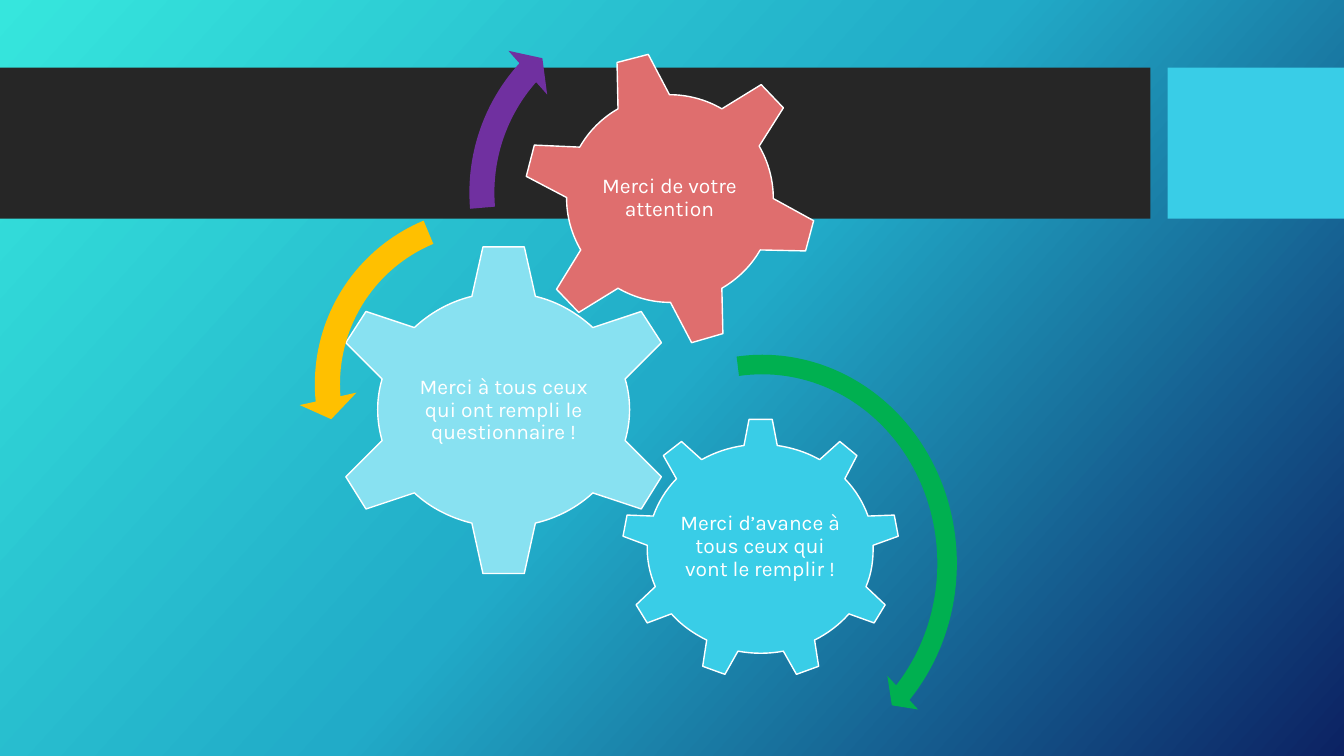
from copy import deepcopy
from math import atan2, pi, tan

from lxml import etree
from pptx import Presentation
from pptx.dml.color import RGBColor
from pptx.enum.shapes import MSO_SHAPE
from pptx.enum.text import MSO_ANCHOR, PP_ALIGN
from pptx.oxml.ns import qn
from pptx.util import Inches, Pt


def color(value):
    return RGBColor.from_string(value)


def paint(shape, fill):
    shape.shadow.inherit = False
    shape.fill.solid()
    shape.fill.fore_color.rgb = color(fill)
    shape.line.fill.background()


presentation = Presentation()
presentation.slide_width = Inches(13.33)
presentation.slide_height = Inches(7.5)
slide = presentation.slides.add_slide(presentation.slide_layouts[6])

background = slide.background.fill
background.gradient()
background.gradient_angle = 360 - 42
last_stop = list(slide._element.iter(qn("a:gs")))[-1]
last_stop.addnext(deepcopy(last_stop))
gradient = [(0, "36E6DD"), (0.5, "21ABC8"), (1, "0C2263")]
for stop, (position, value) in zip(background.gradient_stops, gradient):
    stop.position = position
    stop.color.rgb = color(value)

for left, width, fill in [(0, 11.41, "262626"), (11.58, 1.75, "39CDE7")]:
    band = slide.shapes.add_shape(
        MSO_SHAPE.RECTANGLE, Inches(left), Inches(0.67), Inches(width), Inches(1.5))
    paint(band, fill)

advance_teeth = [
    [(8.13, 4.56), (8.33, 4.38), (8.5, 4.52), (8.38, 4.75)],
    [(8.61, 5.12), (8.87, 5.11), (8.91, 5.32), (8.66, 5.41)],
    [(8.59, 5.82), (8.78, 6), (8.67, 6.18), (8.42, 6.09)],
    [(8.08, 6.35), (8.12, 6.61), (7.9, 6.69), (7.77, 6.46)],
    [(7.32, 6.46), (7.19, 6.69), (6.97, 6.61), (7.01, 6.35)],
    [(6.66, 6.09), (6.42, 6.18), (6.31, 6), (6.5, 5.82)],
    [(6.42, 5.41), (6.18, 5.32), (6.22, 5.11), (6.48, 5.12)],
    [(6.71, 4.75), (6.58, 4.52), (6.76, 4.38), (6.96, 4.56)],
    [(7.38, 4.42), (7.43, 4.16), (7.66, 4.16), (7.71, 4.42)],
]
survey_teeth = [
    [(5.88, 3.25), (6.36, 3.09), (6.56, 3.4), (6.2, 3.76)],
    [(6.2, 4.37), (6.56, 4.73), (6.36, 5.05), (5.88, 4.89)],
    [(5.31, 5.19), (5.2, 5.69), (4.79, 5.69), (4.68, 5.19)],
    [(4.11, 4.89), (3.63, 5.05), (3.43, 4.73), (3.79, 4.37)],
    [(3.79, 3.76), (3.43, 3.4), (3.63, 3.09), (4.11, 3.25)],
    [(4.68, 2.94), (4.79, 2.45), (5.2, 2.45), (5.31, 2.94)],
]
attention_teeth = [
    [(7.16, 1.08), (7.55, 0.84), (7.77, 1.07), (7.53, 1.45)],
    [(7.67, 1.97), (8.07, 2.19), (7.99, 2.49), (7.54, 2.48)],
    [(7.16, 2.86), (7.17, 3.31), (6.86, 3.4), (6.65, 3)],
    [(6.13, 2.86), (5.74, 3.1), (5.52, 2.87), (5.76, 2.48)],
    [(5.62, 1.96), (5.22, 1.75), (5.3, 1.44), (5.75, 1.46)],
    [(6.13, 1.08), (6.12, 0.62), (6.43, 0.54), (6.64, 0.94)],
]
gears = [
    ("Merci d’avance à tous ceux qui vont le remplir !", "39CDE7",
     (6.16, 4.15, 2.76, 2.59), (0.56, 0.63, 0.56, 0.67),
     (7.54, 5.44), (1.13, 1.04), advance_teeth),
    ("Merci à tous ceux qui ont rempli le questionnaire !", "88E1F1",
     (3.25, 2.41, 3.49, 3.32), (0.88, 0.86, 0.88, 0.86),
     (5, 4.07), (1.25, 1.16), survey_teeth),
    ("Merci de votre attention", "DF6E6E",
     (4.84, 0.17, 3.6, 3.6), (1, 1, 1, 1),
     (6.64, 1.97), (1.03, 1.03), attention_teeth),
]

for text, fill, box, insets, (center_x, center_y), (radius_x, radius_y), teeth in gears:
    outline = []
    for tooth, next_tooth in zip(teeth, teeth[1:] + teeth[:1]):
        (x1, y1), (x2, y2) = [
            ((x - center_x) / radius_x, (y - center_y) / radius_y)
            for x, y in (tooth[-1], next_tooth[0])]
        sweep = (atan2(y2, x2) - atan2(y1, x1)) % (2 * pi)
        reach = 4 / 3 * tan(sweep / 4)
        controls = [(x1 - reach * y1, y1 + reach * x1), (x2 + reach * y2, y2 - reach * x2)]
        outline += tooth
        outline += [(center_x + radius_x * x, center_y + radius_y * y) for x, y in controls]
    points = [(Inches(x), Inches(y)) for x, y in outline]
    builder = slide.shapes.build_freeform(*points[0])
    builder.add_line_segments(points[1:] + points[:1], close=True)
    gear = builder.convert_to_shape()

    left, top, width, height = [Inches(length) for length in box]
    outline_path = next(gear._element.iter(qn("a:path")))
    for point in outline_path.iter(qn("a:pt")):
        point.set("x", str(int(point.get("x")) + gear.left - left))
        point.set("y", str(int(point.get("y")) + gear.top - top))
    outline_path.set("w", str(width))
    outline_path.set("h", str(height))
    gear.left, gear.top, gear.width, gear.height = left, top, width, height

    segments = outline_path.findall(qn("a:lnTo"))
    for first in range(3, len(segments), 6):
        curve = etree.Element(qn("a:cubicBezTo"))
        segments[first].addprevious(curve)
        for segment in segments[first:first + 3]:
            curve.append(segment[0])
            outline_path.remove(segment)

    paint(gear, fill)
    gear.line.color.rgb = color("FFFFFF")
    gear.line.width = Pt(1)
    frame = gear.text_frame
    frame.word_wrap = True
    frame.vertical_anchor = MSO_ANCHOR.MIDDLE
    (frame.margin_left, frame.margin_top,
     frame.margin_right, frame.margin_bottom) = [Inches(inset) for inset in insets]
    frame.text = text
    paragraph = frame.paragraphs[0]
    paragraph.alignment = PP_ALIGN.CENTER
    paragraph.line_spacing = 0.9
    paragraph.font.name = "Karla"
    paragraph.font.size = Pt(15)
    paragraph.font.color.rgb = color("FFFFFF")

arrows = [
    (MSO_SHAPE.CIRCULAR_ARROW, (5.5, 3.39, 4.12, 4.4), "00B050",
     (0.047, 2.99, 25.567, 157.765, 0.055)),
    (MSO_SHAPE.LEFT_CIRCULAR_ARROW, (2.96, 1.89, 3.84, 3.84), "FFC000",
     (0.065, 4.3, 104.891, 148.378, 0.075)),
    (MSO_SHAPE.CIRCULAR_ARROW, (4.49, -0.16, 4.14, 4.14), "7030A0",
     (0.06, 3.941, 133.138, 105.082, 0.07)),
]
for kind, box, fill, adjustments in arrows:
    arrow = slide.shapes.add_shape(kind, *[Inches(length) for length in box])
    paint(arrow, fill)
    for index, value in enumerate(adjustments):
        arrow.adjustments[index] = value

presentation.save("out.pptx")
